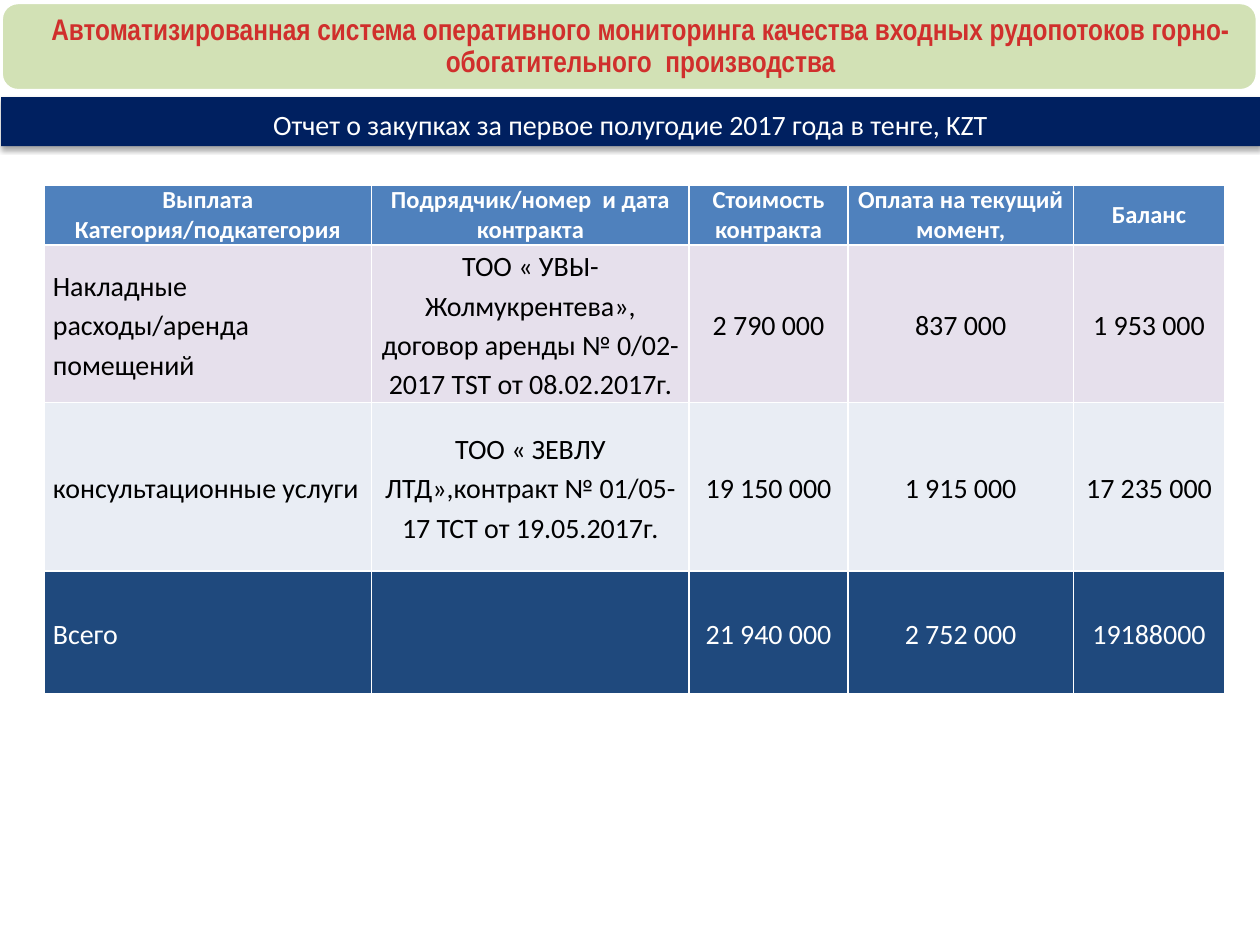
from lxml import etree
from pptx import Presentation
from pptx.dml.color import RGBColor
from pptx.enum.shapes import MSO_SHAPE
from pptx.enum.text import MSO_ANCHOR, PP_ALIGN
from pptx.oxml import parse_xml
from pptx.oxml.ns import nsdecls, qn
from pptx.util import Inches, Pt

ROUNDED = MSO_SHAPE.ROUNDED_RECTANGLE
MIDDLE = MSO_ANCHOR.MIDDLE
LEFT, CENTER = PP_ALIGN.LEFT, PP_ALIGN.CENTER
WHITE, BLACK = "FFFFFF", "000000"

deck = Presentation()
deck.slide_width, deck.slide_height = Inches(10), Inches(7.5)
STEP = deck.slide_width // 1000  # grid step: a thousandth of the slide width
slide = deck.slides.add_slide(deck.slide_layouts[6])


def color(value):
    return RGBColor.from_string(value)


def write(frame, text, size=16, ink=WHITE, font="Calibri", bold=False, align=CENTER, spacing=1.15):
    frame.word_wrap = True
    para = frame.paragraphs[0]
    para.alignment, para.line_spacing = align, spacing
    span = para.add_run()
    span.text = text
    span.font.name, span.font.size, span.font.bold = font, Pt(size), bold
    span.font.color.rgb = color(ink)


# Purchase table
columns = [260, 252, 126, 179, 120]
rows = [  # height, fill, ink, texts
    (47, "4F81BD", WHITE, ["Выплата Категория/подкатегория", "Подрядчик/номер  и дата контракта",
                           "Стоимость контракта", "Оплата на текущий момент,", "Баланс"]),
    (125, "E6E0EC", BLACK, ["Накладные расходы/аренда помещений",
                            "ТОО « УВЫ-Жолмукрентева», договор аренды № 0/02-2017 TST от 08.02.2017г.",
                            "2 790 000", "837 000", "1 953 000"]),
    (134, "E9EDF4", BLACK, ["консультационные услуги",
                            "ТОО « ЗЕВЛУ ЛТД»,контракт № 01/05-17 ТСТ от 19.05.2017г.",
                            "19 150 000", "1 915 000", "17 235 000"]),
    (97, "1F497D", WHITE, ["Всего", "", "21 940 000", "2 752 000", "19188000"]),
]
table = slide.shapes.add_table(len(rows), len(columns), 35 * STEP, 147 * STEP,
                               sum(columns) * STEP, sum(row[0] for row in rows) * STEP).table
for index, width in enumerate(columns):
    table.columns[index].width = width * STEP
for row_index, (height, fill, ink, texts) in enumerate(rows):
    table.rows[row_index].height = height * STEP
    header = row_index == 0
    for column_index, text in enumerate(texts):
        cell = table.cell(row_index, column_index)
        cell.vertical_anchor = MIDDLE
        cell.margin_left = cell.margin_right = 7 * STEP
        cell.margin_top = cell.margin_bottom = 0
        if text:
            write(cell.text_frame, text, size=14 if header else 16, ink=ink, bold=header,
                  align=CENTER if header or column_index else LEFT,
                  spacing=1.0 if header else 1.15)
        properties = cell._tc.get_or_add_tcPr()
        for side in ("lnL", "lnR", "lnT", "lnB"):
            properties.append(parse_xml(
                f'<a:{side} {nsdecls("a")} w="{Pt(1)}"><a:solidFill>'
                f'<a:srgbClr val="{WHITE}"/></a:solidFill></a:{side}>'))
        cell.fill.solid()
        cell.fill.fore_color.rgb = color(fill)

# Report band and title plate
band = slide.shapes.add_shape(ROUNDED, STEP, 77 * STEP, 999 * STEP, 39 * STEP)
title = slide.shapes.add_shape(ROUNDED, STEP, 2 * STEP, 997 * STEP, 70 * STEP)
for box, fill, corner in ((band, "002060", 0), (title, "D2E1B5", 0.19)):
    box.shadow.inherit = False
    box.adjustments[0] = corner
    box.fill.solid()
    box.fill.fore_color.rgb = color(fill)
    box.text_frame.vertical_anchor = MIDDLE

band.line.fill.background()
effects = band._element.spPr.find(qn("a:effectLst"))
shadow = etree.SubElement(effects, qn("a:outerShdw"), blurRad=str(Pt(3.1)), dist=str(Pt(1.8)),
                          dir="5400000", rotWithShape="0")
shade = etree.SubElement(shadow, qn("a:srgbClr"), val=BLACK)
etree.SubElement(shade, qn("a:alpha"), val="35000")
write(band.text_frame, "Отчет о закупках за первое полугодие 2017 года в тенге, KZT")

title.line.color.rgb = color(WHITE)
title.line.width = Pt(2)
frame = title.text_frame
frame.margin_left = 28 * STEP
frame.margin_right = frame.margin_top = frame.margin_bottom = 10 * STEP
write(frame, "Автоматизированная система оперативного мониторинга качества входных рудопотоков "
             "горно-обогатительного  производства",
      size=17, ink="D02F2C", font="Arial Narrow", bold=True, spacing=0.9)

deck.save("out.pptx")
